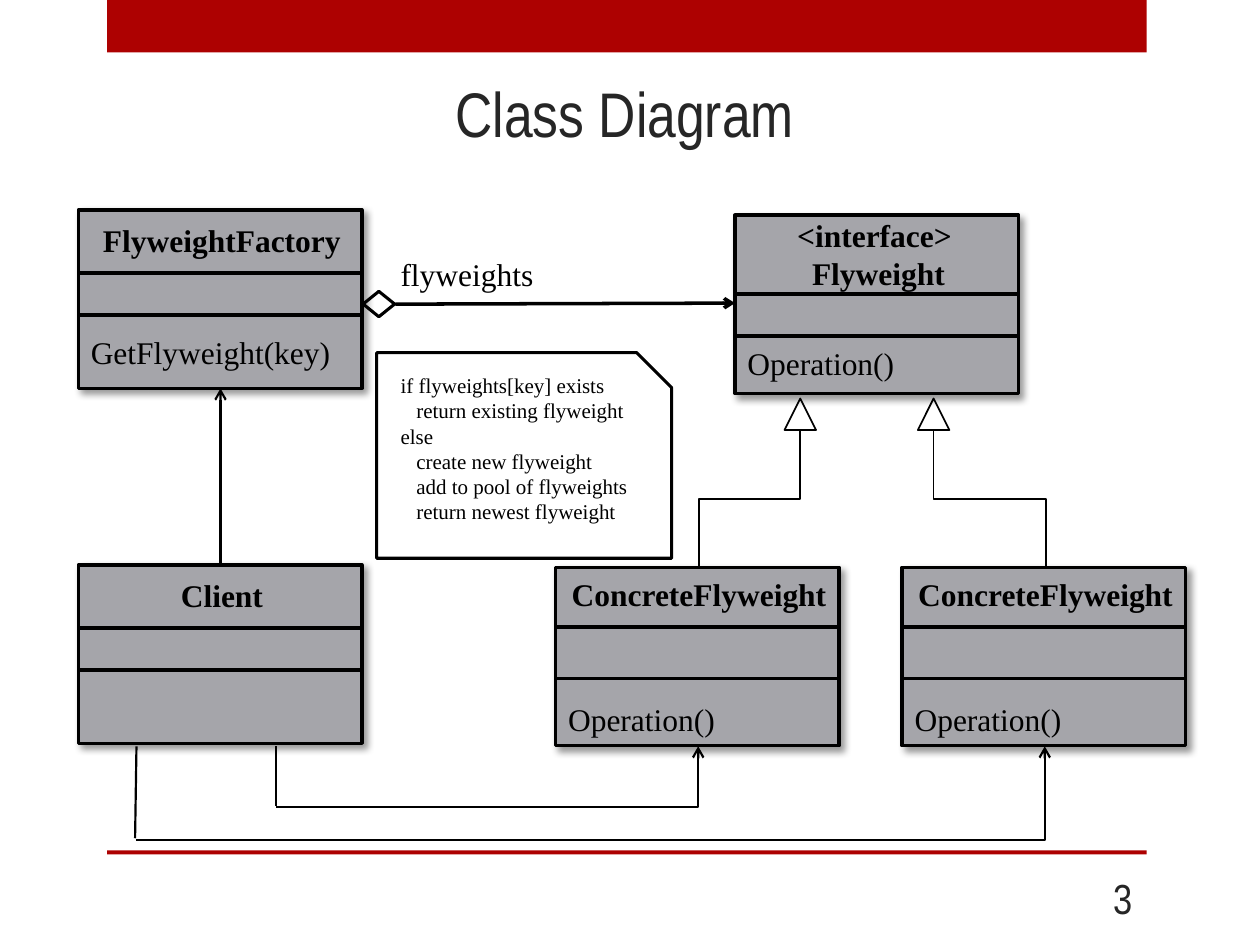
import pptx
import pptx.dml.color
import pptx.enum.shapes
import pptx.enum.text
import pptx.oxml
import pptx.oxml.ns
import pptx.util

Pt = pptx.util.Pt
SHAPE = pptx.enum.shapes.MSO_SHAPE
LINE = pptx.enum.shapes.MSO_CONNECTOR
ALIGN = pptx.enum.text.PP_ALIGN
ANCHOR = pptx.enum.text.MSO_ANCHOR
NS = pptx.oxml.ns.nsdecls("a")

COLORS = {"accent": "AD0101", "heading": "262626", "box": "A5A5AA", "ink": "000000"}
SERIF, NARROW = "Times New Roman", "Arial Narrow"
BOX_W, BOX_H = 162, 102

# left, top, name lines, name offset, divider offsets, operation, operation offset
CLASSES = [
    (420, 123, ["<interface> ", "Flyweight"], -3, (45, 69), "Operation()", 70),
    (44.8, 120, ["FlyweightFactory"], 3, (36, 60), "GetFlyweight(key)", 67),
    (317.5, 324.2, ["ConcreteFlyweight"], 0.7, (34, 63.5), "Operation()", 72),
    (515.5, 324.2, ["ConcreteFlyweight"], 0.7, (34, 63.5), "Operation()", 72),
    (44.8, 322.8, ["Client"], 3, (36, 60), None, 0),
]
# start, end, width, has arrowhead
ASSOCIATIONS = [
    ((226, 173.8), (420, 173.2), 2, True),
    ((126, 322.8), (126, 222), 1.25, True),
    ((78, 426.5), (77.2, 479), 1.25, False),
    ((157.6, 426.5), (157.6, 460.8), 1.25, False),
]
CLIENT_USES = [((157.6, 461.3), (399, 426.5)), ((77.6, 480), (597, 426.5))]
INHERITANCE = [((457.3, 245.7), (399.5, 324.5), 1.25),
               ((533.5, 245.7), (597.8, 324.5), 1)]
TRIANGLE = 18
PSEUDOCODE = [
    ("if flyweights[key] exists", 0),
    ("return existing flyweight", 9),
    ("else", 0),
    ("create new flyweight", 9),
    ("add to pool of flyweights", 9),
    ("return newest flyweight", 9),
]

prs = pptx.Presentation()
prs.slide_width, prs.slide_height = Pt(720), Pt(540)
slide = prs.slides.add_slide(prs.slide_layouts[6])


def rgb(name):
    return pptx.dml.color.RGBColor.from_string(COLORS[name])


def text(lines, left, top, width, height, size=18, font=SERIF, color="ink",
         bold=False, align=ALIGN.LEFT, anchor=ANCHOR.TOP, indents=None):
    frame = slide.shapes.add_textbox(Pt(left), Pt(top), Pt(width), Pt(height)).text_frame
    frame.word_wrap = True
    frame.vertical_anchor = anchor
    for i, line in enumerate(lines):
        paragraph = frame.paragraphs[0] if i == 0 else frame.add_paragraph()
        paragraph.alignment = align
        if indents and indents[i]:
            paragraph._p.get_or_add_pPr().set("marL", str(Pt(indents[i])))
        run = paragraph.add_run()
        run.text = line
        run.font.name, run.font.size, run.font.bold = font, Pt(size), bold
        run.font.color.rgb = rgb(color)


def outline(kind, left, top, width, height, fill=None, weight=None):
    shape = slide.shapes.add_shape(kind, Pt(left), Pt(top), Pt(width), Pt(height))
    shape.shadow.inherit = False
    if fill:
        shape.fill.solid()
        shape.fill.fore_color.rgb = rgb(fill)
    else:
        shape.fill.background()
    if weight:
        shape.line.color.rgb = rgb("ink")
        shape.line.width = Pt(weight)
    else:
        shape.line.fill.background()
    return shape


def connect(start, end, weight, arrow=False, kind=LINE.STRAIGHT):
    line = slide.shapes.add_connector(kind, *map(Pt, (*start, *end)))
    line.line.color.rgb = rgb("ink")
    line.line.width = Pt(weight)
    if arrow:
        line.line._get_or_add_ln().append(
            pptx.oxml.parse_xml(f'<a:tailEnd {NS} type="arrow"/>'))
    line._element.spPr.append(pptx.oxml.parse_xml(f"<a:effectLst {NS}/>"))
    return line


def connect_corner(start, end, weight):
    """One bend: sideways, then up to an arrowhead."""
    line = connect(start, end, weight, True, LINE.ELBOW)
    line._element.spPr.prstGeom.set("prst", "bentConnector2")


def connect_step(start, end, weight):
    """Two bends: down, sideways, down; a quarter turn of the elbow preset."""
    (x1, y1), (x2, y2) = start, end
    run, drop = abs(x2 - x1), y2 - y1
    left, top = (x1 + x2 - drop) / 2, (y1 + y2 - run) / 2
    line = connect((left, top), (left + drop, top + run), weight, kind=LINE.ELBOW)
    xfrm = line._element.spPr.xfrm
    xfrm.set("rot", str((90 if x2 < x1 else 270) * 60000))
    if x2 > x1:
        xfrm.set("flipH", "1")


def cast_shadow(shape):
    effects = shape._element.spPr.find(pptx.oxml.ns.qn("a:effectLst"))
    effects.append(pptx.oxml.parse_xml(
        f'<a:outerShdw {NS} blurRad="{Pt(4)}" dist="{Pt(3)}" dir="2700000" '
        f'algn="tl" rotWithShape="0"><a:srgbClr val="{COLORS["ink"]}">'
        '<a:alpha val="40000"/></a:srgbClr></a:outerShdw>'))


def class_box(left, top, name, name_dy, dividers, operation, operation_dy):
    cast_shadow(outline(SHAPE.RECTANGLE, left, top, BOX_W, BOX_H, "box", 2))
    for dy in dividers:
        connect((left, top + dy), (left + BOX_W, top + dy), 2)
    text(name, left - 3, top + name_dy, BOX_W + 8, 29, bold=True, align=ALIGN.CENTER)
    if operation:
        text([operation], left, top + operation_dy, BOX_W, 29)


outline(SHAPE.RECTANGLE, 61.2, 0, 594, 30, "accent")
outline(SHAPE.RECTANGLE, 61.2, 486, 594, 2.2, "accent")
text(["Class Diagram"], 60, 38, 594, 52, size=36, font=NARROW, color="heading",
     align=ALIGN.CENTER, anchor=ANCHOR.MIDDLE)
text(["3"], 594, 498.5, 60, 29, size=24, font=NARROW, color="heading",
     align=ALIGN.RIGHT, anchor=ANCHOR.MIDDLE)

for entry in CLASSES:
    class_box(*entry)
for association in ASSOCIATIONS:
    connect(*association)
for start, end in CLIENT_USES:
    connect_corner(start, end, 1.25)
for start, end, weight in INHERITANCE:
    connect_step(start, end, weight)
    outline(SHAPE.ISOSCELES_TRIANGLE, start[0] - TRIANGLE / 2, start[1] - TRIANGLE,
            TRIANGLE, TRIANGLE, weight=1)

outline(SHAPE.DIAMOND, 207.5, 166.5, 18, 14.5, weight=1.75)
text(["flyweights"], 221.8, 142, 100, 29)

note = outline(SHAPE.SNIP_ROUND_RECTANGLE, 215.3, 201.5, 168.5, 117.5, weight=1.75)
note.adjustments[0], note.adjustments[1] = 0, 0.17
text([line for line, _ in PSEUDOCODE], 221.8, 209.5, 162, 94, size=12,
     indents=[indent for _, indent in PSEUDOCODE])

prs.save("out.pptx")
